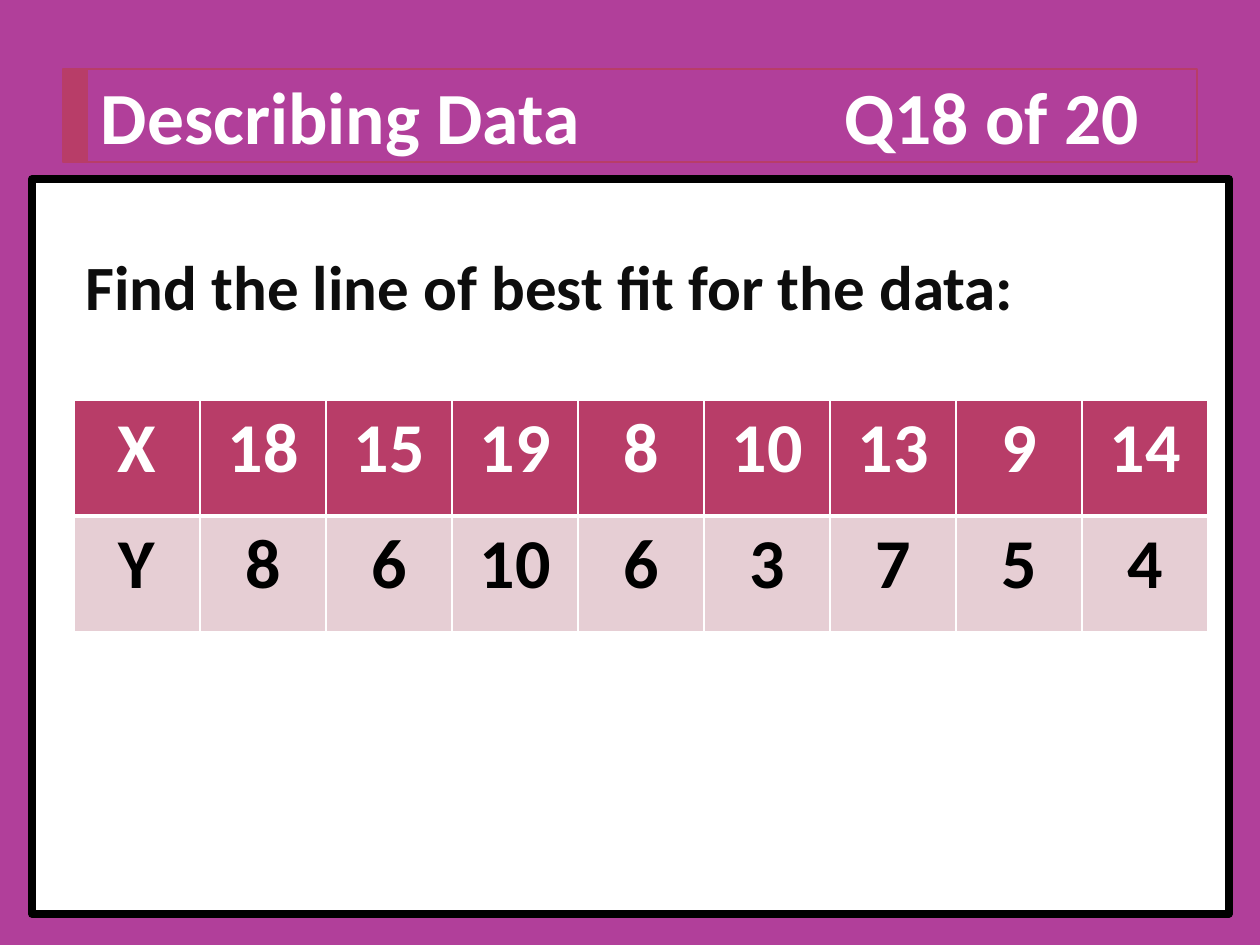
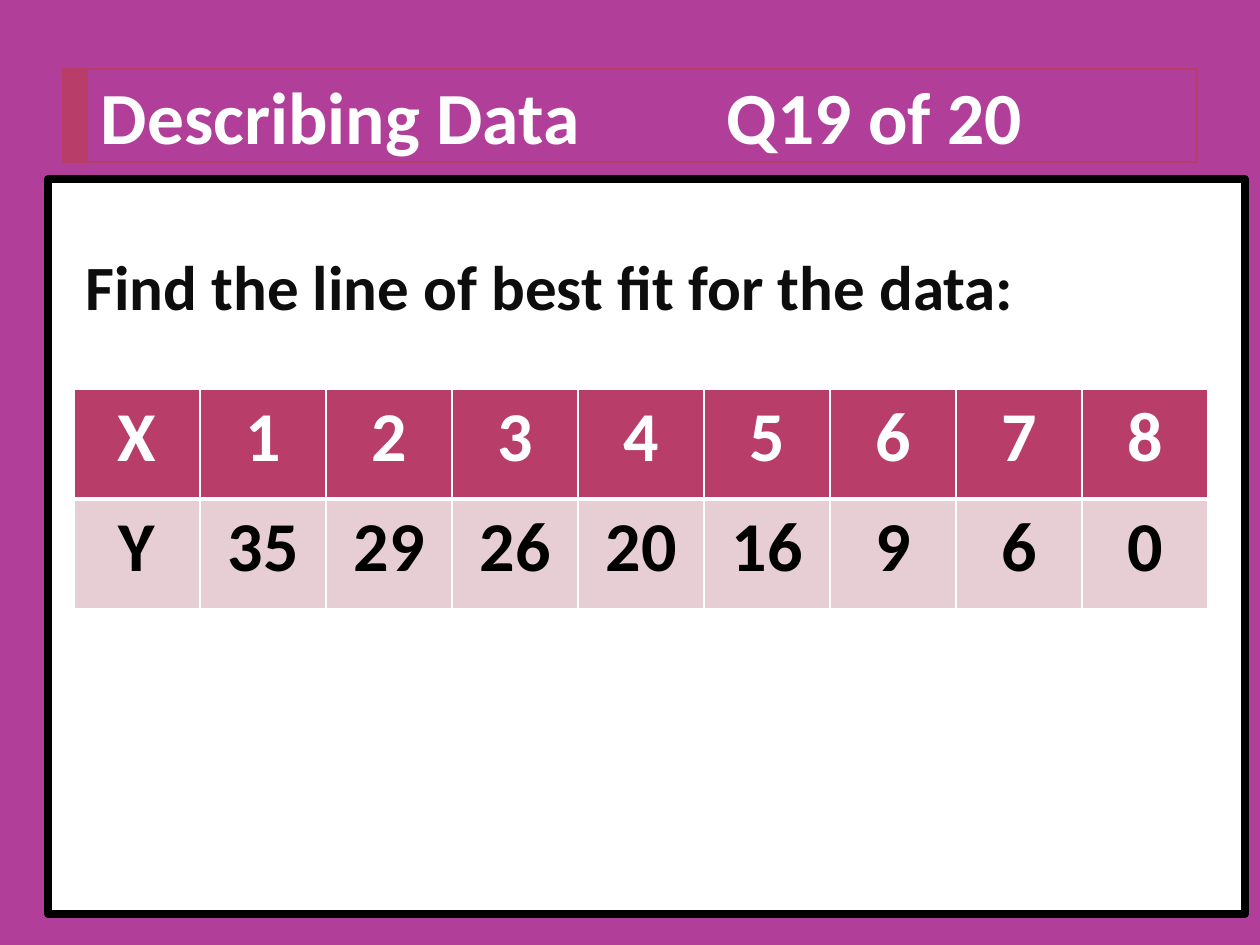
from dataclasses import dataclass

from lxml.etree import SubElement
from pptx import Presentation
from pptx.dml.color import RGBColor
from pptx.enum.shapes import MSO_SHAPE as Shape
from pptx.enum.text import MSO_ANCHOR as Anchor, MSO_AUTO_SIZE as AutoSize, PP_ALIGN as Align
from pptx.oxml.ns import qn
from pptx.util import Emu, Pt

PX = 914400 / 126  # EMU in one px
FONT = "Calibri"
PURPLE, CRIMSON, PINK = "B13F9A", "B83D68", "E6CED4"
WHITE, BLACK, INK = "FFFFFF", "000000", "0D0D0D"
COL_W = 126


@dataclass
class Question:
    number: str
    number_tab: int  # from the left edge of the title text
    card_left: int
    table_top: int
    row_h: int
    xs: list[int]
    ys: list[int]


QUESTIONS = [
    Question("Q18 of 20", 743, 32, 400, 116,
             [18, 15, 19, 8, 10, 13, 9, 14], [8, 6, 10, 6, 3, 7, 5, 4]),
    Question("Q19 of 20", 626, 48, 389, 110,
             [1, 2, 3, 4, 5, 6, 7, 8], [35, 29, 26, 20, 16, 9, 6, 0]),
]


def px(n: int) -> Emu:
    return Emu(round(n * PX))


def box(*sides: int) -> list[Emu]:
    return [px(n) for n in sides]


def rgb(color: str) -> RGBColor:
    return RGBColor.from_string(color)


def paint(target, color: str) -> None:
    target.fill.solid()
    target.fill.fore_color.rgb = rgb(color)


def style(p, size: int, color: str, align=Align.LEFT) -> None:
    p.alignment = align
    p.font.name, p.font.size, p.font.bold = FONT, Pt(size), True
    p.font.color.rgb = rgb(color)


def add_rect(slide, at: list[Emu], fill: str):
    sp = slide.shapes.add_shape(Shape.RECTANGLE, *at)
    sp.shadow.inherit = False
    paint(sp, fill)
    sp.line.fill.background()
    return sp


def set_outline(sp, color: str, width: float) -> None:
    sp.line.color.rgb = rgb(color)
    sp.line.width = Pt(width)


def add_title(slide, q: Question) -> None:
    sp = slide.shapes.title
    sp.left, sp.top, sp.width, sp.height = box(63, 69, 1134, 93)
    set_outline(sp, CRIMSON, 0.75)
    tf = sp.text_frame
    tf.auto_size = AutoSize.NONE
    tf.vertical_anchor = Anchor.MIDDLE
    tf.margin_left = px(38)
    tf.text = f"Describing Data\t{q.number}"
    p = tf.paragraphs[0]
    style(p, 42, WHITE)
    # Tab stop that places the question number
    tabs = SubElement(p._p.get_or_add_pPr(), qn("a:tabLst"))
    p._p.pPr.insert(0, tabs)
    SubElement(tabs, qn("a:tab"), pos=str(px(q.number_tab)), algn="l")


def add_prompt(slide) -> None:
    tf = slide.shapes.add_textbox(*box(73, 241, 1134, 89)).text_frame
    tf.word_wrap = True
    tf.text = "Find the line of best fit for the data:"
    style(tf.paragraphs[0], 36, INK)


def set_borders(cell, **widths: int) -> None:
    tc_pr = cell._tc.get_or_add_tcPr()
    for i, (side, width) in enumerate(widths.items()):
        ln = SubElement(tc_pr, qn(f"a:ln{side}"), w=str(Pt(width)))
        fill = SubElement(ln, qn("a:solidFill"))
        SubElement(fill, qn("a:srgbClr"), val=WHITE)
        tc_pr.insert(i, ln)


def add_data_table(slide, q: Question) -> None:
    rows = [["X", *q.xs], ["Y", *q.ys]]
    cols = len(rows[0])
    at = box(74, q.table_top, cols * COL_W, len(rows) * q.row_h)
    table = slide.shapes.add_table(len(rows), cols, *at).table
    table.horz_banding = False
    looks = [(CRIMSON, WHITE, 1, 3), (PINK, BLACK, 3, 1)]
    for r, (values, (fill, color, top, bottom)) in enumerate(zip(rows, looks)):
        for c, value in enumerate(values):
            cell = table.cell(r, c)
            cell.text = str(value)
            style(cell.text_frame.paragraphs[0], 40, color, Align.CENTER)
            paint(cell, fill)
            set_borders(cell, L=1, R=1, T=top, B=bottom)


def main() -> None:
    prs = Presentation()
    prs.slide_width, prs.slide_height = box(1260, 945)
    paint(prs.slide_master.background, PURPLE)
    for q in QUESTIONS:
        slide = prs.slides.add_slide(prs.slide_layouts[5])
        add_title(slide, q)
        add_rect(slide, box(63, 69, 25, 94), CRIMSON)
        card = add_rect(slide, box(q.card_left, 179, 1197, 735), WHITE)
        set_outline(card, BLACK, 4.33)
        add_prompt(slide)
        add_data_table(slide, q)
    prs.save("out.pptx")


if __name__ == "__main__":
    main()
